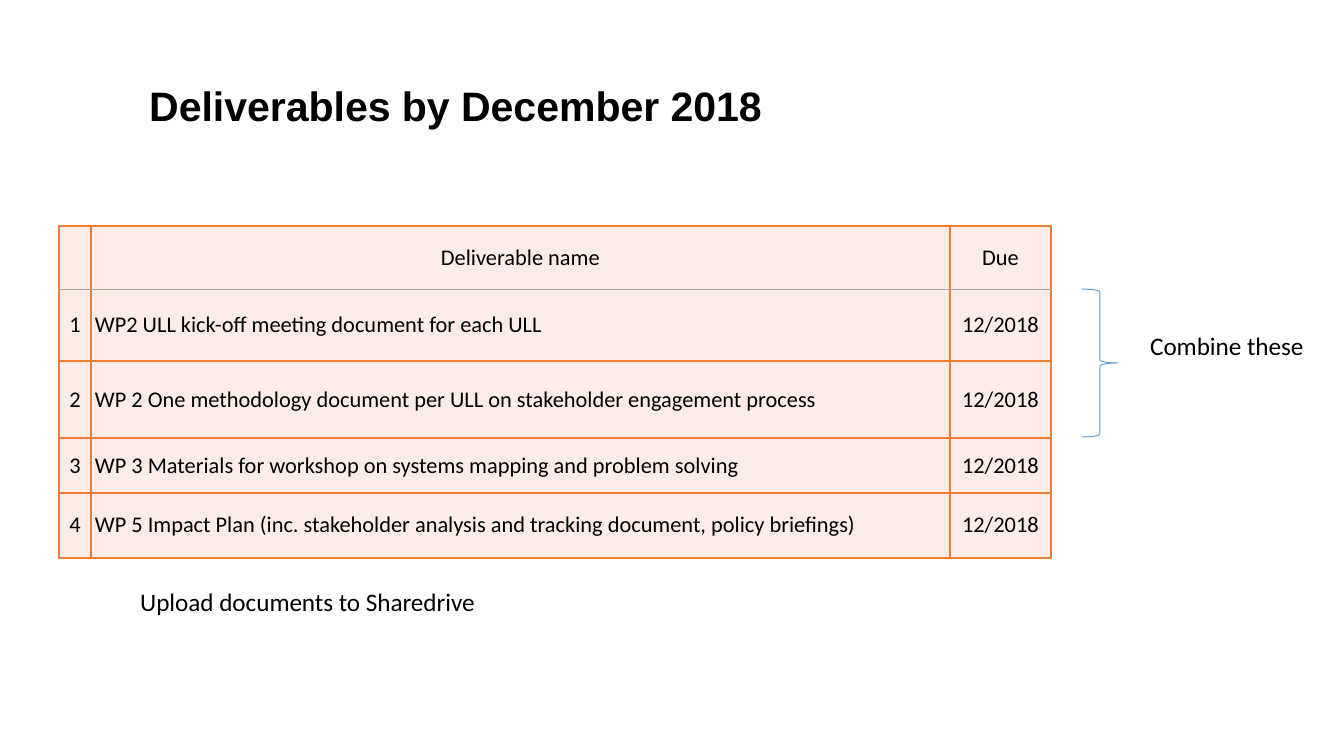
from pptx import Presentation
from pptx.dml.color import RGBColor
from pptx.enum.shapes import MSO_SHAPE as Shape
from pptx.enum.text import MSO_ANCHOR as Anchor, MSO_AUTO_SIZE as AutoSize, PP_ALIGN as Align
from pptx.oxml import parse_xml
from pptx.oxml.ns import nsdecls
from pptx.util import Pt

# Content
TITLE = "Deliverables by December 2018"
HEADER = ("", "Deliverable name", "Due")
DELIVERABLES = [
    "WP2 ULL kick-off meeting document for each ULL",
    "WP 2 One methodology document per ULL on stakeholder engagement process",
    "WP 3 Materials for workshop on systems mapping and problem solving",
    "WP 5 Impact Plan (inc. stakeholder analysis and tracking document, policy briefings)",
]
DUE = "12/2018"
COMBINE = "Combine these"
UPLOAD = "Upload documents to Sharedrive"

# Layout in px, colours
COLS = (32, 859, 101)
ROWS = (63, 72, 77, 55, 65)
TABLE_X, TABLE_Y = 59, 226
BLACK, ORANGE, PINK, BLUE, GREY = "000000", "ED7D31", "FCECE8", "5B9BD5", "A5A5A5"


def px(n):
    return round(n * 914400 / 134.4)


def color(value):
    return RGBColor.from_string(value)


def add_run(p, text, size, font="Calibri", bold=False):
    r = p.add_run()
    r.text = text
    r.font.size, r.font.name, r.font.bold = Pt(size), font, bold
    r.font.color.rgb = color(BLACK)


def add_text(shapes, box, text, size, font="Calibri", bold=False, wrap=False):
    sp = shapes.add_textbox(*map(px, box))
    tf = sp.text_frame
    tf.word_wrap = wrap
    tf.auto_size = AutoSize.NONE if wrap else AutoSize.SHAPE_TO_FIT_TEXT
    add_run(tf.paragraphs[0], text, size, font, bold)
    return tf


def add_border(cell, side, value, width):
    # Borders come before the fill in the cell properties
    cell._tc.get_or_add_tcPr().append(parse_xml(
        f'<a:{side} {nsdecls("a")} w="{Pt(width)}"><a:solidFill>'
        f'<a:srgbClr val="{value}"/></a:solidFill></a:{side}>'))


prs = Presentation()
prs.slide_width, prs.slide_height = px(1344), px(756)
s = prs.slides.add_slide(prs.slide_layouts[6])

# Title
tf = add_text(s.shapes, (136, 34, 680, 148), TITLE, 22, "Arial", True, wrap=True)
tf.vertical_anchor = Anchor.MIDDLE
tf.paragraphs[0].line_spacing = 0.9

# Deliverables table
rows = [HEADER] + [(str(i), name, DUE) for i, name in enumerate(DELIVERABLES, 1)]
table = s.shapes.add_table(len(ROWS), len(COLS), px(TABLE_X), px(TABLE_Y),
                           px(sum(COLS)), px(sum(ROWS))).table
for column, width in zip(table.columns, COLS):
    column.width = px(width)
for row, height in zip(table.rows, ROWS):
    row.height = px(height)
for i, row in enumerate(rows):
    for j, text in enumerate(row):
        cell = table.cell(i, j)
        is_name = i > 0 and j == 1
        cell.margin_left = px(4) if is_name else 0
        cell.margin_right = cell.margin_top = cell.margin_bottom = 0
        cell.vertical_anchor = Anchor.MIDDLE
        for side in ("lnL", "lnR", "lnT", "lnB"):
            under_header = (i, side) in ((0, "lnB"), (1, "lnT"))
            add_border(cell, side, *((GREY, 0.5) if under_header else (ORANGE, 1)))
        cell.fill.solid()
        cell.fill.fore_color.rgb = color(PINK)
        p = cell.text_frame.paragraphs[0]
        p.alignment = Align.LEFT if is_name else Align.CENTER
        if text:
            add_run(p, text, 12)

# Brace spanning the first two deliverables, with its label
group = s.shapes.add_group_shape()
brace = group.shapes.add_shape(Shape.RIGHT_BRACE, px(1082), px(TABLE_Y + ROWS[0]),
                               px(36), px(ROWS[1] + ROWS[2] - 1))
brace.shadow.inherit = False
brace.fill.background()
brace.line.color.rgb = color(BLUE)
brace.line.width = Pt(0.5)
add_text(group.shapes, (1137, 324, 183, 44), COMBINE, 13.5)

# Note below the table
add_text(s.shapes, (127, 580, 370, 44), UPLOAD, 13.5)

prs.save("out.pptx")
